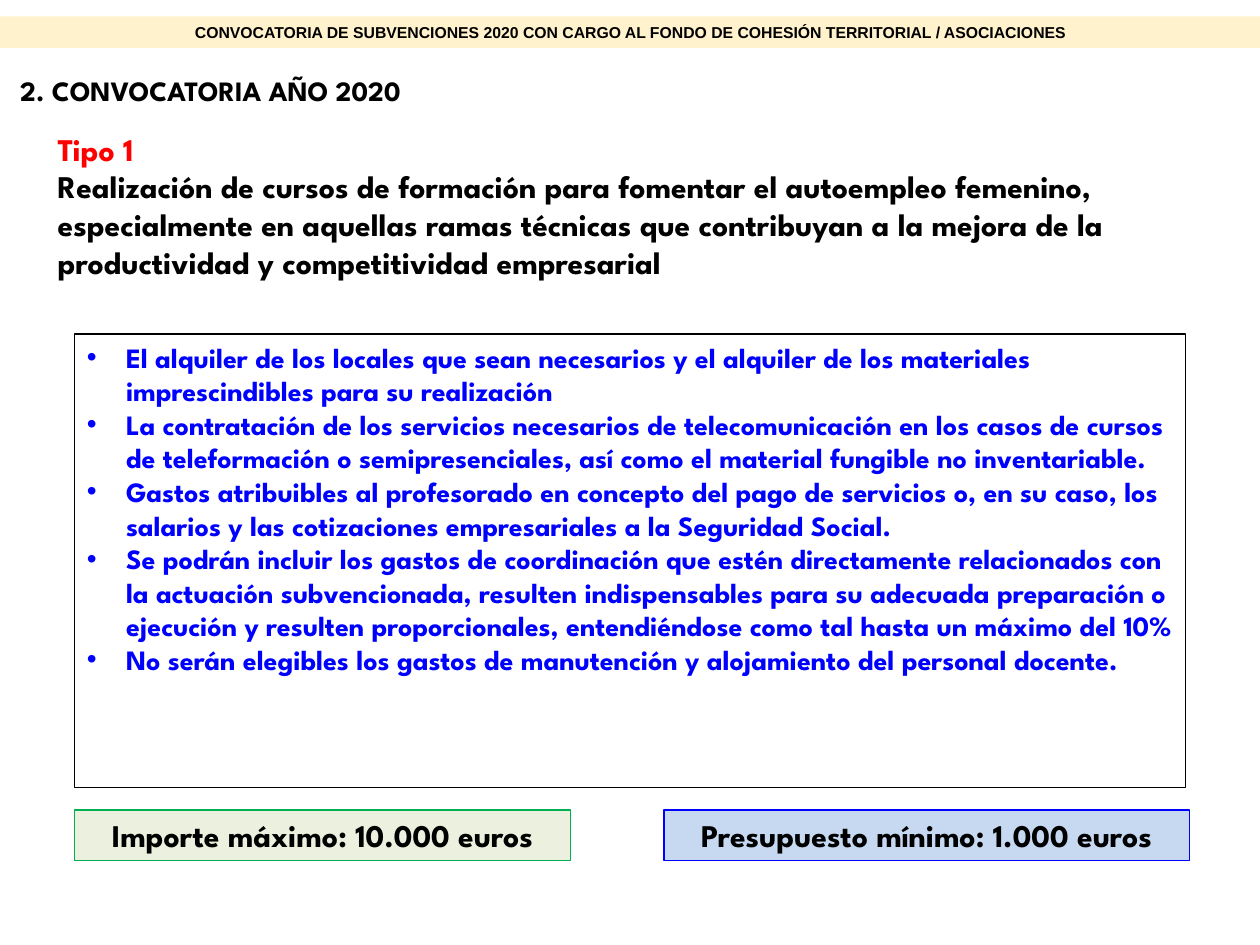
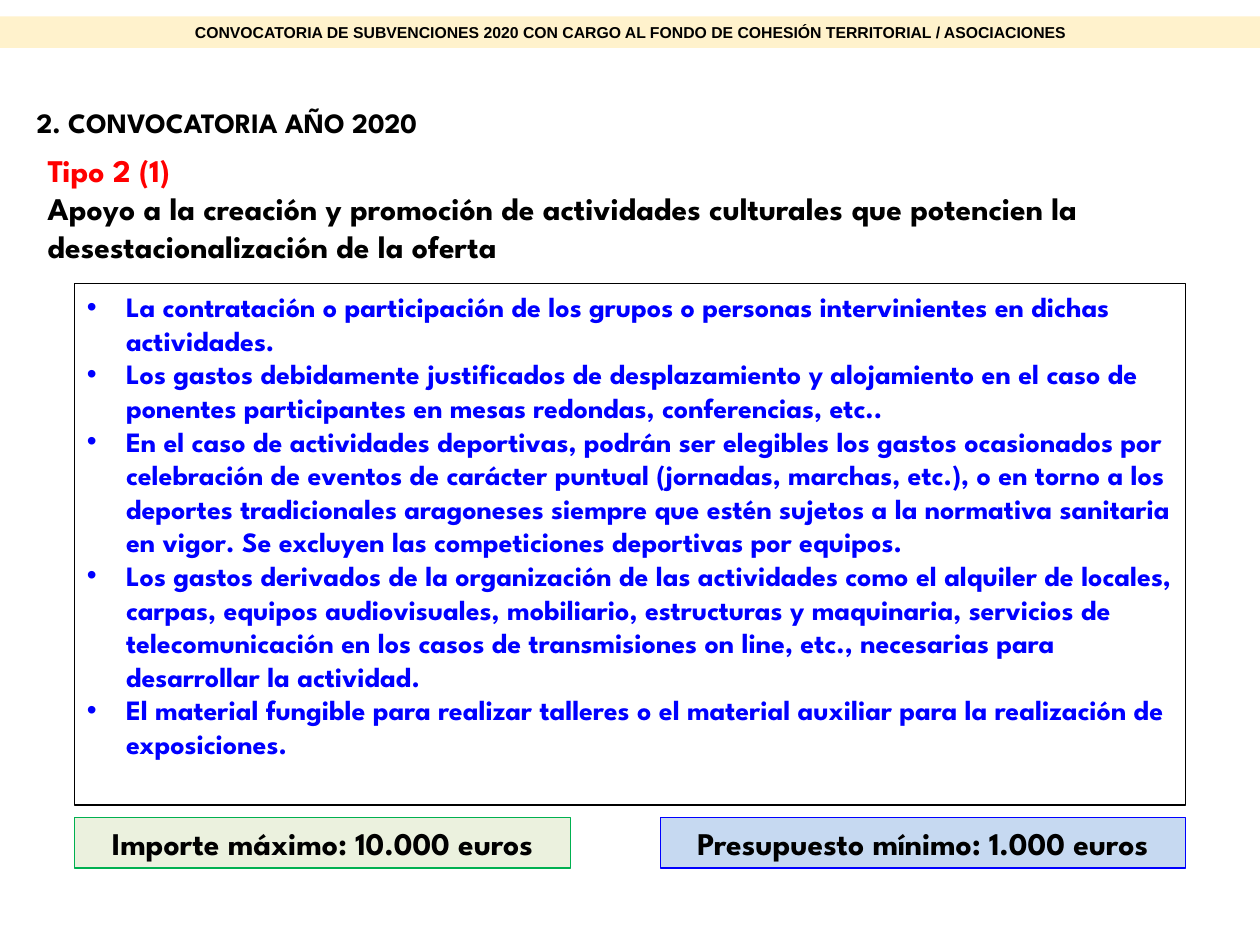
from dataclasses import dataclass

import lxml.etree
import pptx
import pptx.dml.color
import pptx.enum.shapes
import pptx.enum.text
import pptx.oxml.ns
import pptx.util

Inches = pptx.util.Inches
Align = pptx.enum.text.PP_ALIGN
Anchor = pptx.enum.text.MSO_ANCHOR


@dataclass(frozen=True)
class Theme:
    face: str = "League Spartan"
    plain: str = "Arial"
    black: str = "000000"
    red: str = "FF0000"
    blue: str = "0000FF"
    green: str = "00B050"
    mint: str = "EBF1DE"
    sky: str = "C6D9F1"
    gold: str = "FFC000"
    large: int = 18
    medium: int = 16
    small: int = 9
    edge: float = 0.75


@dataclass(frozen=True)
class Page:
    head: tuple
    lead: tuple
    list_top: float
    list_high: float
    box_top: float
    cost_left: float
    kind: str
    goal: str
    items: tuple


THEME = Theme()
BAND = ("CONVOCATORIA DE SUBVENCIONES 2020 CON CARGO AL FONDO DE "
        "COHESIÓN TERRITORIAL / ASOCIACIONES")
HEAD = "2. CONVOCATORIA AÑO 2020"
GRANT = "Importe máximo: 10.000 euros"
COST = "Presupuesto mínimo: 1.000 euros"
LEFT = 0.59
HANG = 0.31

PAGES = (
    Page(
        head=(0.06, 0.53, 9.38, 0.37),
        lead=(0.36, 0.98, 9.62, 1.31),
        list_top=2.65, list_high=3.6, box_top=6.43, cost_left=5.27,
        kind="Tipo 1",
        goal="Realización de cursos de formación para fomentar el autoempleo "
             "femenino, especialmente en aquellas ramas técnicas que "
             "contribuyan a la mejora de la productividad y competitividad "
             "empresarial",
        items=(
            "El alquiler de los locales que sean necesarios y el alquiler de "
            "los materiales imprescindibles para su realización",
            "La contratación de los servicios necesarios de telecomunicación "
            "en los casos de cursos de teleformación o semipresenciales, así "
            "como el material fungible no inventariable.",
            "Gastos atribuibles al profesorado en concepto del pago de "
            "servicios o, en su caso, los salarios y las cotizaciones "
            "empresariales a la Seguridad Social.",
            "Se podrán incluir los gastos de coordinación que estén "
            "directamente relacionados con la actuación subvencionada, "
            "resulten indispensables para su adecuada preparación o ejecución "
            "y resulten proporcionales, entendiéndose como tal hasta un "
            "máximo del 10%",
            "No serán elegibles los gastos de manutención y alojamiento del "
            "personal docente.",
        ),
    ),
    Page(
        head=(0.19, 0.79, 9.38, 0.37),
        lead=(0.28, 1.15, 9.62, 1.01),
        list_top=2.25, list_high=4.14, box_top=6.49, cost_left=5.24,
        kind="Tipo 2 (1)",
        goal="Apoyo a la creación y promoción de actividades culturales que "
             "potencien la desestacionalización de la oferta",
        items=(
            "La contratación o participación de los grupos o personas "
            "intervinientes en dichas actividades.",
            "Los gastos debidamente justificados de desplazamiento y "
            "alojamiento en el caso de ponentes participantes en mesas "
            "redondas, conferencias, etc..",
            "En el caso de actividades deportivas, podrán ser elegibles los "
            "gastos ocasionados por celebración de eventos de carácter "
            "puntual (jornadas, marchas, etc.), o en torno a los deportes "
            "tradicionales aragoneses siempre que estén sujetos a la "
            "normativa sanitaria en vigor. Se excluyen las competiciones "
            "deportivas por equipos.",
            "Los gastos derivados de la organización de las actividades como "
            "el alquiler de locales, carpas, equipos audiovisuales, "
            "mobiliario, estructuras y maquinaria, servicios de "
            "telecomunicación en los casos de transmisiones on line, etc., "
            "necesarias para desarrollar la actividad.",
            "El material fungible para realizar talleres o el material "
            "auxiliar para la realización de exposiciones.",
        ),
    ),
)


def tint(code):
    return pptx.dml.color.RGBColor.from_string(code)


def place(shape, spot):
    shape.left, shape.top, shape.width, shape.height = map(Inches, spot)


def write(shape, lines, size, face=THEME.face, align=Align.LEFT,
          anchor=Anchor.TOP):
    frame = shape.text_frame
    frame.word_wrap = True
    frame.auto_size = pptx.enum.text.MSO_AUTO_SIZE.NONE
    frame.vertical_anchor = anchor
    frame.text = "\n".join(text for text, _ in lines)
    for para, (_, code) in zip(frame.paragraphs, lines):
        para.alignment = align
        para.space_before = pptx.util.Pt(0)
        para.font.name = face
        para.font.size = pptx.util.Pt(size)
        para.font.bold = True
        para.font.color.rgb = tint(code)


def outline(shape, code):
    shape.line.color.rgb = tint(code)
    shape.line.width = pptx.util.Pt(THEME.edge)


def add_rect(slide, spot, fill):
    kind = pptx.enum.shapes.MSO_SHAPE.RECTANGLE
    rect = slide.shapes.add_shape(kind, *map(Inches, spot))
    rect.shadow.inherit = False
    rect.fill.solid()
    rect.fill.fore_color.rgb = tint(fill)
    return rect


def add_band(slide):
    band = add_rect(slide, (0, 0.13, 10, 0.25), THEME.gold)
    band.line.fill.background()
    name = pptx.oxml.ns.qn
    color = band.fill._xPr.find(".//" + name("a:srgbClr"))
    lxml.etree.SubElement(color, name("a:alpha")).set("val", "20000")
    write(band, [(BAND, THEME.black)], THEME.small, THEME.plain,
          Align.CENTER, Anchor.MIDDLE)


def add_sum(slide, spot, text, fill, edge):
    box = add_rect(slide, spot, fill)
    outline(box, edge)
    write(box, [(text, THEME.black)], THEME.large, align=Align.CENTER)


def set_head(slide, spot):
    head = slide.shapes.title
    place(head, spot)
    write(head, [(HEAD, THEME.black)], THEME.medium, align=Align.JUSTIFY)


def add_lead(slide, page):
    lead = slide.shapes.add_textbox(*map(Inches, page.lead))
    lines = [(page.kind, THEME.red), (page.goal, THEME.black)]
    write(lead, lines, THEME.large)


def set_list(slide, page):
    body = slide.placeholders[1]
    place(body, (LEFT, page.list_top, 8.82, page.list_high))
    outline(body, THEME.black)
    write(body, [(item, THEME.blue) for item in page.items], THEME.medium)
    for para in body.text_frame.paragraphs:
        props = para._p.get_or_add_pPr()
        props.set("marL", str(Inches(HANG)))
        props.set("indent", str(-Inches(HANG)))


def add_page(deck, page):
    slide = deck.slides.add_slide(deck.slide_layouts[1])
    set_head(slide, page.head)
    add_lead(slide, page)
    set_list(slide, page)
    add_sum(slide, (LEFT, page.box_top, 3.94, 0.4), GRANT,
            THEME.mint, THEME.green)
    add_sum(slide, (page.cost_left, page.box_top, 4.17, 0.4), COST,
            THEME.sky, THEME.blue)
    add_band(slide)


def main():
    deck = pptx.Presentation()
    deck.slide_width = Inches(10)
    deck.slide_height = Inches(7.5)
    for page in PAGES:
        add_page(deck, page)
    deck.save("out.pptx")


if __name__ == "__main__":
    main()
